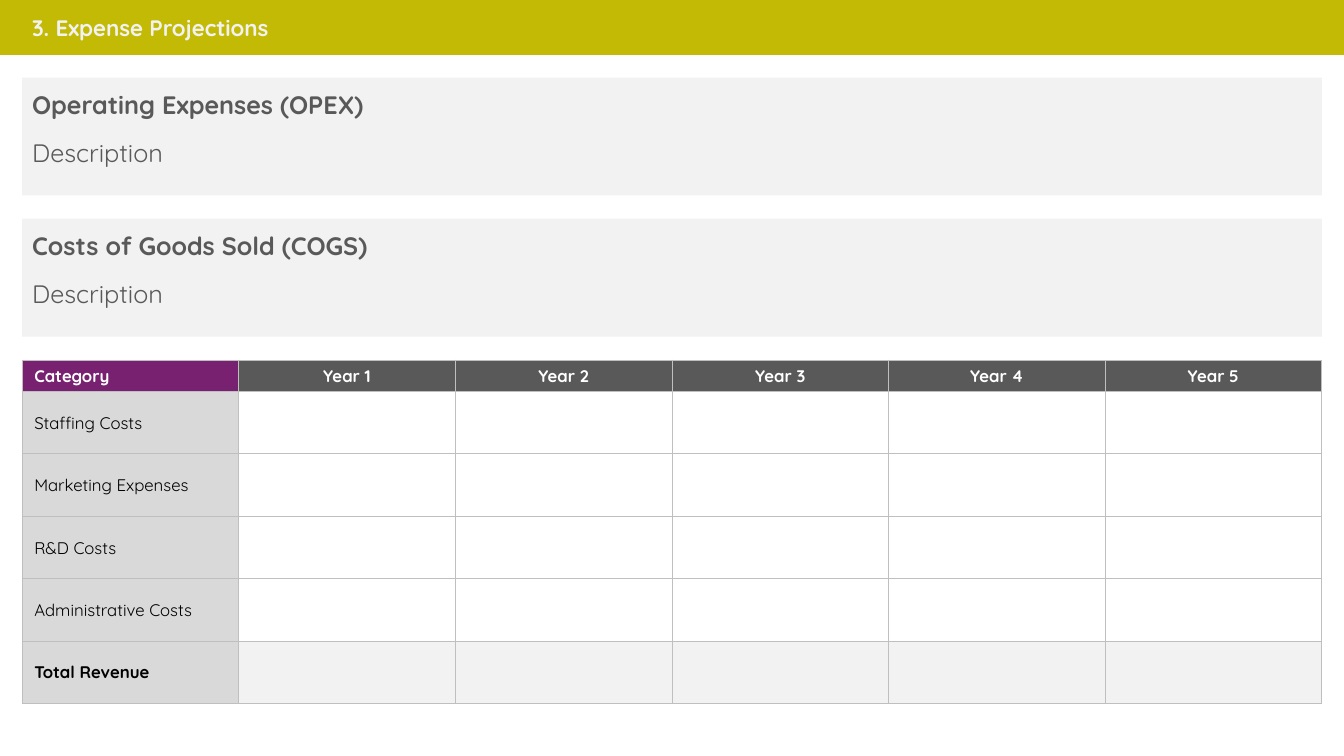
from lxml.etree import SubElement
from pptx import Presentation
from pptx.dml.color import RGBColor
from pptx.enum.shapes import MSO_SHAPE as Shape
from pptx.enum.text import MSO_ANCHOR as Anchor, MSO_AUTO_SIZE as AutoSize, PP_ALIGN as Align
from pptx.oxml.ns import qn
from pptx.util import Inches, Pt

OLIVE = RGBColor(0xC3, 0xBA, 0x05)
PURPLE = RGBColor(0x78, 0x21, 0x70)
DARK_GRAY = RGBColor(0x59, 0x59, 0x59)
BORDER_GRAY = RGBColor(0xBF, 0xBF, 0xBF)
LABEL_GRAY = RGBColor(0xD9, 0xD9, 0xD9)
PALE_GRAY = RGBColor(0xF2, 0xF2, 0xF2)
WHITE = RGBColor(0xFF, 0xFF, 0xFF)
BLACK = RGBColor(0, 0, 0)

WIDTH, HEIGHT = 13.33, 7.5
MARGIN = 0.22
CONTENT_WIDTH = 12.89

SECTIONS = [(0.77, "Operating Expenses (OPEX)"), (2.17, "Costs of Goods Sold (COGS)")]
YEARS = [f"Year {number}" for number in range(1, 6)]
CATEGORIES = ["Staffing Costs", "Marketing Expenses", "R&D Costs", "Administrative Costs"]
TOTAL = "Total Revenue"


class ExpenseSlide:
    font = "Quicksand"

    def __init__(self, slide):
        self.slide = slide

    def add_styled_run(self, paragraph, text, size, color, bold=False):
        run = paragraph.add_run()
        run.text = text
        run.font.name = self.font
        run.font.size = Pt(size)
        run.font.bold = bold
        run.font.color.rgb = color

    def panel(self, left, top, width, height, color, outlined=False):
        panel = self.slide.shapes.add_shape(
            Shape.RECTANGLE, Inches(left), Inches(top), Inches(width), Inches(height))
        panel.shadow.inherit = False
        panel.fill.solid()
        panel.fill.fore_color.rgb = color
        if outlined:
            panel.line.color.rgb = color
            panel.line.width = Pt(1.5)
        else:
            panel.line.fill.background()

    def text(self, top, width, height, text, size, color, bold=False):
        frame = self.slide.shapes.add_textbox(
            Inches(MARGIN), Inches(top), Inches(width), Inches(height)).text_frame
        frame.word_wrap = True
        frame.auto_size = AutoSize.SHAPE_TO_FIT_TEXT
        self.add_styled_run(frame.paragraphs[0], text, size, color, bold)

    def section(self, top, heading):
        self.panel(MARGIN, top, CONTENT_WIDTH, 1.17, PALE_GRAY)
        self.text(top + 0.07, 6.95, 0.4, heading, 18, DARK_GRAY, bold=True)
        self.text(top + 0.54, 11.5, 0.4, "Description", 18, DARK_GRAY)

    def border(self, cell):
        properties = cell._tc.get_or_add_tcPr()
        for side in ("a:lnL", "a:lnR", "a:lnT", "a:lnB"):
            line = SubElement(properties, qn(side), w=str(Pt(0.5)))
            fill = SubElement(line, qn("a:solidFill"))
            SubElement(fill, qn("a:srgbClr"), val=str(BORDER_GRAY))

    def cell(self, cell, fill=None, text="", color=BLACK, bold=False, centered=False):
        self.border(cell)
        if fill is None:
            cell.fill.background()
        else:
            cell.fill.solid()
            cell.fill.fore_color.rgb = fill
        if not text:
            return
        cell.vertical_anchor = Anchor.MIDDLE
        cell.margin_left = Inches(0.01 if centered else 0.12)
        cell.margin_right = cell.margin_top = Inches(0.01)
        cell.margin_bottom = 0
        paragraph = cell.text_frame.paragraphs[0]
        if centered:
            paragraph.alignment = Align.CENTER
        self.add_styled_run(paragraph, text, 12, color, bold)

    def cost_table(self, top, height):
        labels = CATEGORIES + [TOTAL]
        table = self.slide.shapes.add_table(
            len(labels) + 1, len(YEARS) + 1, Inches(MARGIN), Inches(top),
            Inches(CONTENT_WIDTH), Inches(height)).table
        table.first_row = table.horz_banding = False
        for column in table.columns:
            column.width = Inches(CONTENT_WIDTH / len(table.columns))
        header_height = 0.31
        for index, row in enumerate(table.rows):
            row.height = Inches((height - header_height) / len(labels) if index else header_height)

        self.cell(table.cell(0, 0), PURPLE, "Category", WHITE, bold=True)
        for column, year in enumerate(YEARS, 1):
            self.cell(table.cell(0, column), DARK_GRAY, year, WHITE, bold=True, centered=True)
        for row, label in enumerate(labels, 1):
            is_total = label == TOTAL
            self.cell(table.cell(row, 0), LABEL_GRAY, label, bold=is_total)
            for column in range(1, len(YEARS) + 1):
                self.cell(table.cell(row, column), PALE_GRAY if is_total else None)


def main():
    deck = Presentation()
    deck.slide_width, deck.slide_height = Inches(WIDTH), Inches(HEIGHT)
    page = ExpenseSlide(deck.slides.add_slide(deck.slide_layouts[6]))
    page.panel(0, 0, WIDTH, 0.54, OLIVE, outlined=True)
    page.text(0.09, 8.08, 0.37, "3. Expense Projections", 16, PALE_GRAY, bold=True)
    for top, heading in SECTIONS:
        page.section(top, heading)
    page.cost_table(3.57, 3.41)
    deck.save("out.pptx")


if __name__ == "__main__":
    main()
